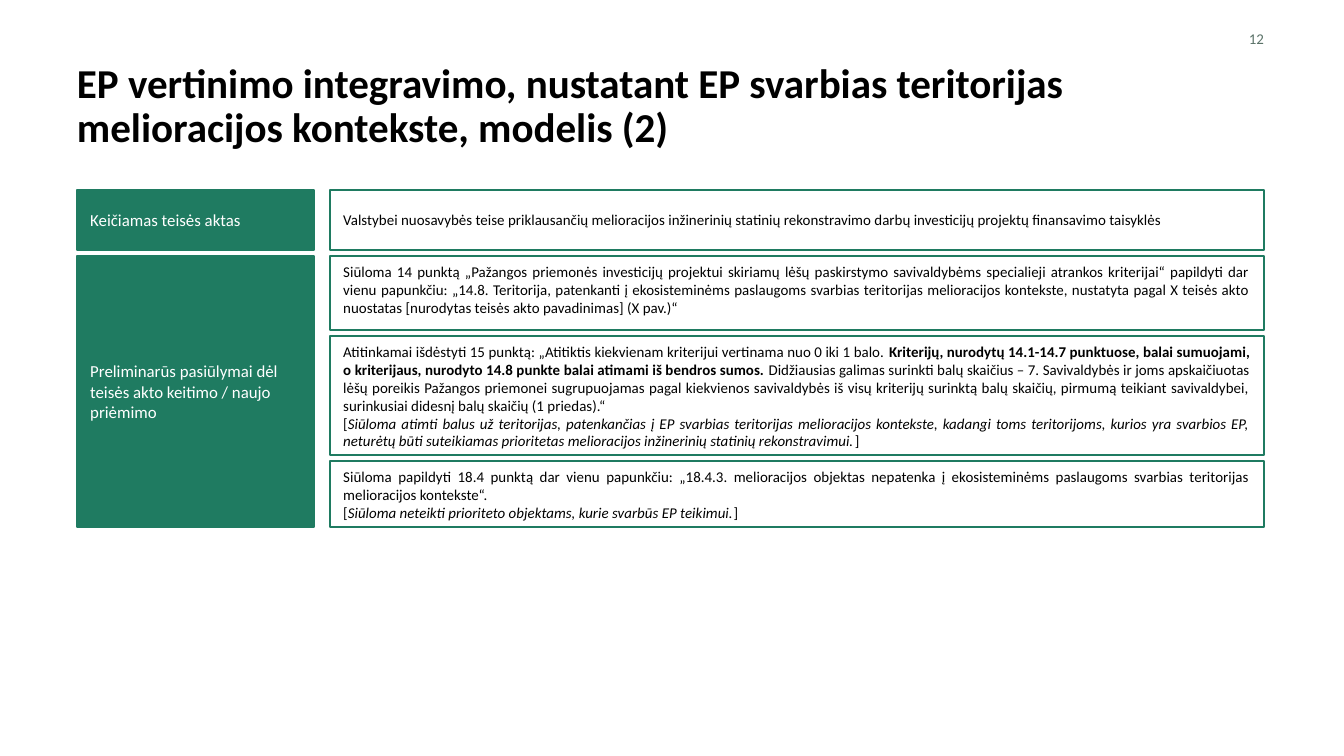
"""Build the slide on the model for weighing EP in land drainage."""
from pptx import Presentation
from pptx.dml.color import RGBColor as Rgb
from pptx.enum.shapes import MSO_SHAPE as Kind
from pptx.enum.text import MSO_ANCHOR as Anchor, MSO_AUTO_SIZE as Auto, PP_ALIGN as Align
from pptx.util import Pt

SCALE = 6804
WIDE, HIGH = 1344, 756
COLORS = {"green": "1F7B61", "gray": "5A7268", "white": "FFFFFF", "black": "000000"}
LEFT, RIGHT, TOP, GAP = 77, 330, 190, 6
SIDE, BODY = 237, 934

LAW = "Valstybei nuosavybės teise priklausančių melioracijos inžinerinių statinių rekonstravimo darbų investicijų projektų finansavimo taisyklės"
RULE = "Siūloma 14 punktą „Pažangos priemonės investicijų projektui skiriamų lėšų paskirstymo savivaldybėms specialieji atrankos kriterijai“ papildyti dar vienu papunkčiu: „14.8. Teritorija, patenkanti į ekosisteminėms paslaugoms svarbias teritorijas melioracijos kontekste, nustatyta pagal X teisės akto nuostatas [nurodytas teisės akto pavadinimas] (X pav.)“"
SCORE = [
    ("Atitinkamai išdėstyti 15 punktą: „Atitiktis kiekvienam kriterijui vertinama nuo 0 iki 1 balo. ", {}),
    ("Kriterijų, nurodytų 14.1-14.7 punktuose, balai sumuojami, o kriterijaus, nurodyto 14.8 punkte balai atimami iš bendros sumos. ", {"bold": True}),
    ("Didžiausias galimas surinkti balų skaičius – 7. Savivaldybės ir joms apskaičiuotas lėšų poreikis Pažangos priemonei sugrupuojamas pagal kiekvienos savivaldybės iš visų kriterijų surinktą balų skaičių, pirmumą teikiant savivaldybei, surinkusiai didesnį balų skaičių (1 priedas).“", {}),
]
WHY = "Siūloma atimti balus už teritorijas, patenkančias į EP svarbias teritorijas melioracijos kontekste, kadangi toms teritorijoms, kurios yra svarbios EP, neturėtų būti suteikiamas prioritetas melioracijos inžinerinių statinių rekonstravimui."
ITEM = "Siūloma papildyti 18.4 punktą dar vienu papunkčiu: „18.4.3. melioracijos objektas nepatenka į ekosisteminėms paslaugoms svarbias teritorijas melioracijos kontekste“. "
AIM = "Siūloma neteikti prioriteto objektams, kurie svarbūs EP teikimui."


def plain(text):
    return [(text, {})]


def note(text):
    return [("[", {}), (text, {"italic": True}), ("]", {})]


class Deck:
    def __init__(self):
        self.prs = Presentation()
        self.prs.slide_width, self.prs.slide_height = WIDE * SCALE, HIGH * SCALE
        self.slide = self.prs.slides.add_slide(self.prs.slide_layouts[5])
        self.font = "Calibri"

    def fill_text(self, shape, paras, size, color, align, anchor, bare=False, bold=False, space=None):
        frame = shape.text_frame
        form = {"word_wrap": True, "auto_size": Auto.NONE, "vertical_anchor": anchor}
        if bare:
            form.update({f"margin_{side}": 0 for side in ("left", "right", "top", "bottom")})
        for name, value in form.items():
            setattr(frame, name, value)
        for num, runs in enumerate(paras):
            para = frame.add_paragraph() if num else frame.paragraphs[0]
            para.alignment, para.line_spacing = align, space
            for text, extra in runs:
                run = para.add_run()
                run.text = text
                look = {"name": self.font, "size": Pt(size), "bold": bold, "italic": False}
                for name, value in (look | extra).items():
                    setattr(run.font, name, value)
                run.font.color.rgb = Rgb.from_string(COLORS[color])

    def title(self, text, *box):
        shape = self.slide.shapes.title
        for name, value in zip(("left", "top", "width", "height"), box):
            setattr(shape, name, value * SCALE)
        self.fill_text(shape, [plain(text)], 22, "black", Align.LEFT, Anchor.TOP, True, True, 0.9)

    def label(self, text, *box):
        shape = self.slide.shapes.add_textbox(*(v * SCALE for v in box))
        self.fill_text(shape, [plain(text)], 8, "gray", Align.RIGHT, Anchor.MIDDLE, True)

    def rect(self, *box):
        shape = self.slide.shapes.add_shape(Kind.RECTANGLE, *(v * SCALE for v in box))
        shape.shadow.inherit = False
        shape.line.color.rgb = Rgb.from_string(COLORS["green"])
        shape.line.width = Pt(1)
        return shape

    def head(self, text, *box):
        shape = self.rect(*box)
        shape.fill.solid()
        shape.fill.fore_color.rgb = Rgb.from_string(COLORS["green"])
        self.fill_text(shape, [plain(text)], 9, "white", Align.LEFT, Anchor.MIDDLE)

    def panel(self, paras, anchor, *box):
        shape = self.rect(*box)
        shape.fill.background()
        self.fill_text(shape, paras, 8, "black", Align.JUSTIFY, anchor)


def main():
    deck = Deck()
    deck.title("EP vertinimo integravimo, nustatant EP svarbias teritorijas melioracijos kontekste, modelis (2)",
               LEFT, 63, 1185, 90)
    deck.label("12", 961, 30, 303, 18)
    rows = [
        (60, Anchor.MIDDLE, [plain(LAW)]),
        (74, Anchor.TOP, [plain(RULE)]),
        (119, Anchor.TOP, [SCORE, note(WHY)]),
        (66, Anchor.TOP, [plain(ITEM), note(AIM)]),
    ]
    top, tops = TOP, []
    for high, anchor, paras in rows:
        deck.panel(paras, anchor, RIGHT, top, BODY, high)
        tops.append(top)
        top += high + GAP
    deck.head("Keičiamas teisės aktas", LEFT, TOP, SIDE, rows[0][0])
    deck.head("Preliminarūs pasiūlymai dėl teisės akto keitimo / naujo priėmimo",
              LEFT, tops[1], SIDE, top - GAP - tops[1])
    deck.prs.save("out.pptx")


if __name__ == "__main__":
    main()
